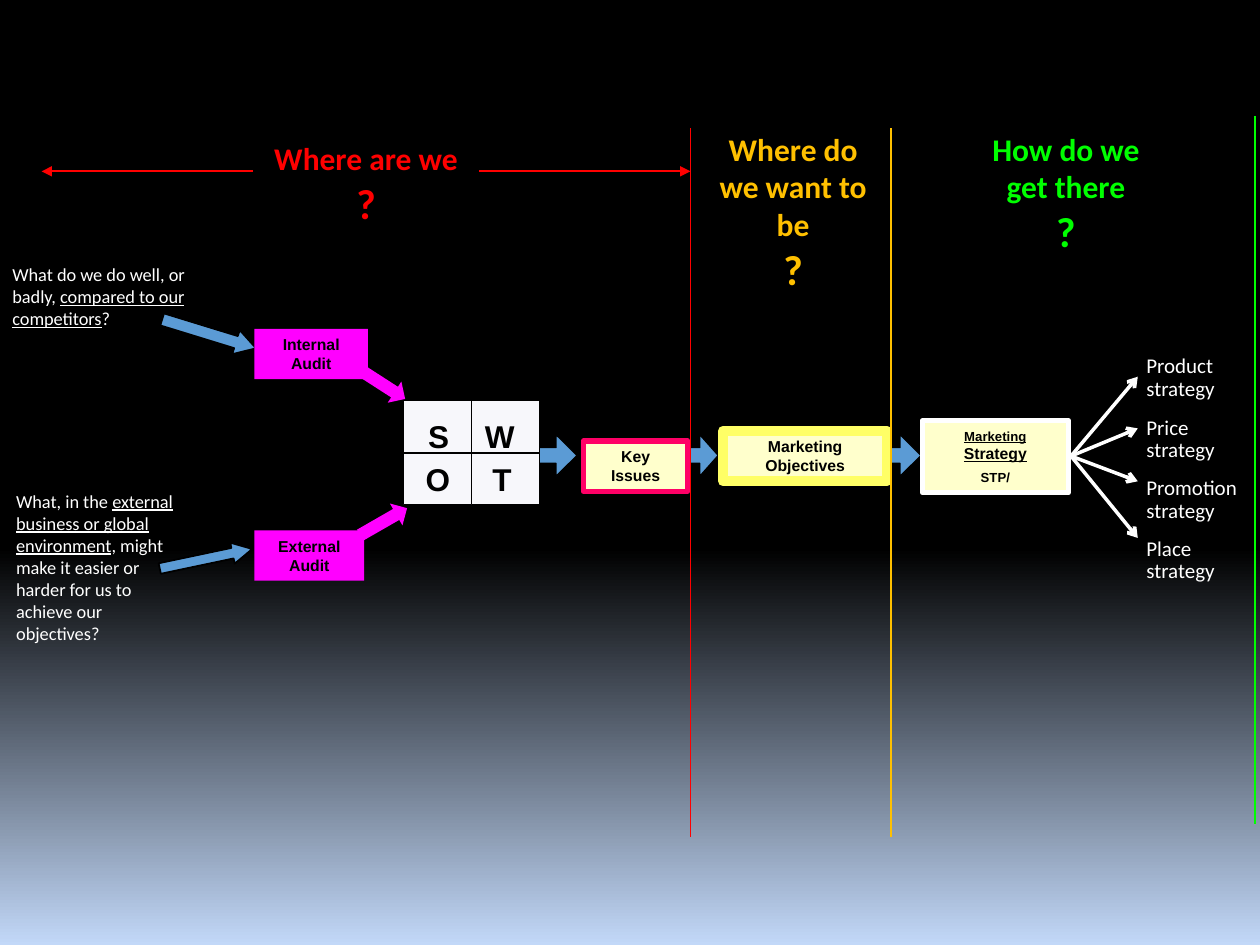
import pptx
import pptx.dml.color
import pptx.enum.shapes
import pptx.enum.text
import pptx.oxml
import pptx.util
from lxml import etree

Inches, Pt = pptx.util.Inches, pptx.util.Pt
RGB = pptx.dml.color.RGBColor.from_string
SHAPE = pptx.enum.shapes.MSO_SHAPE
ALIGN = pptx.enum.text.PP_ALIGN
ANCHOR = pptx.enum.text.MSO_ANCHOR
COLORS = {
    "black": "000000", "white": "FFFFFF", "sky": "C2D8F8", "blue": "5B9BD5",
    "cream": "FFFFCC", "rose": "FF0066", "yellow": "FFFF66", "magenta": "FF00FF",
    "pale": "F7F7FB", "red": "FF0000", "amber": "FFC000", "green": "00FF00",
}

prs = pptx.Presentation()
prs.slide_width, prs.slide_height = Inches(10), Inches(7.5)
slide = prs.slides.add_slide(prs.slide_layouts[6])
shapes = slide.shapes

backdrop = slide.background.fill
backdrop.gradient()
backdrop.gradient_angle = 270
for stop, position, color in zip(backdrop.gradient_stops, (0.58, 1), ("black", "sky")):
    stop.position = position
    stop.color.rgb = RGB(COLORS[color])


def add_box(kind, place, fill=None, line=None, width=0.75, paragraphs=(), font="Arial",
            color="black", bold=True, align=ALIGN.CENTER):
    """Add a shape, or a text box if kind is None; a paragraph is a list of
    (text, size, underline) runs."""
    place = [Inches(v) for v in place]
    if kind is None:
        box = shapes.add_textbox(*place)
    else:
        box = shapes.add_shape(kind, *place)
        box.shadow.inherit = False
        box.fill.solid()
        box.fill.fore_color.rgb = RGB(COLORS[fill])
        if line:
            box.line.color.rgb = RGB(COLORS[line])
            box.line.width = Pt(width)
        else:
            box.line.fill.background()
    frame = box.text_frame
    frame.word_wrap = True
    frame.vertical_anchor = ANCHOR.TOP if kind is None else ANCHOR.MIDDLE
    for i, runs in enumerate(paragraphs):
        paragraph = frame.paragraphs[0] if i == 0 else frame.add_paragraph()
        paragraph.alignment = align
        for text, size, underline in runs:
            run = paragraph.add_run()
            run.text = text
            run.font.name, run.font.size = font, Pt(size)
            run.font.bold, run.font.underline = bold, underline
            run.font.color.rgb = RGB(COLORS[color])
    return box


def add_line(start, end, color, width=1, head=None):
    line = shapes.add_connector(pptx.enum.shapes.MSO_CONNECTOR.STRAIGHT,
                                *[Inches(v) for v in (*start, *end)])
    line.line.color.rgb = RGB(COLORS[color])
    line.line.width = Pt(width)
    if head:
        tail = etree.SubElement(line.line._get_or_add_ln(), pptx.oxml.ns.qn("a:tailEnd"))
        tail.set("type", head)
    etree.SubElement(line._element.spPr, pptx.oxml.ns.qn("a:effectLst"))


# Arrows of the process chain and from the questions to the audits
for place, angle, adjustments, line_width in [
    ((6.99, 3.45, 0.32, 0.33), 0, (0.375, 0.521), 0.75),
    ((5.42, 3.45, 0.28, 0.33), 0, (0.375, 0.521), 0.75),
    ((4.26, 3.45, 0.32, 0.33), 0, (0.375, 0.521), 0.75),
    ((1.26, 4.35, 0.75, 0.17), 348.1, (0.5, 0.94), 1),
    ((1.27, 2.55, 0.78, 0.2), 17.1, (0.5, 0.834), 1),
]:
    arrow = add_box(SHAPE.RIGHT_ARROW, place, "blue", "black", line_width)
    arrow.rotation = angle
    arrow.adjustments[0], arrow.adjustments[1] = adjustments

# Process steps
for place, line, width, paragraphs in [
    ((4.63, 3.5, 0.83, 0.4), "rose", 3, [[("Key Issues", 9, False)]]),
    ((5.74, 3.42, 1.3, 0.4), "yellow", 6, [[("Marketing Objectives", 9, False)]]),
    ((7.32, 3.34, 1.16, 0.57), "white", 3,
     [[("Marketing ", 7.5, True), ("Strategy", 9, True)], [("STP/", 7.5, False)]]),
]:
    step = add_box(SHAPE.RECTANGLE, place, "cream", line, width, paragraphs)
    for paragraph in step.text_frame.paragraphs[1:]:
        paragraph.space_before = Pt(4)

for audit, place in [("External", (2.02, 4.21, 0.87, 0.4)),
                     ("Internal", (2.02, 2.61, 0.9, 0.4))]:
    add_box(SHAPE.RECTANGLE, place, "magenta",
            paragraphs=[[(audit, 9, False)], [("Audit", 9, False)]])

# SWOT grid
for row in range(2):
    for column in range(2):
        add_box(SHAPE.RECTANGLE, (3.2 + 0.54 * column, 3.18 + 0.415 * row, 0.54, 0.41),
                "pale", "black")
for letter, left, top, width in [("S", 3.3, 3.26, 0.46), ("W", 3.75, 3.26, 0.59),
                                 ("O", 3.28, 3.6, 0.51), ("T", 3.81, 3.6, 0.43)]:
    add_box(None, (left, top, width, 0.4), paragraphs=[[(letter, 18, False)]],
            align=ALIGN.LEFT)

# Phase dividers and the span of the first phase
for x, top, color in [(5.48, 1.02, "red"), (7.07, 1.02, "amber"), (9.96, 0.92, "green")]:
    add_line((x, top), (x, top + 5.62), color)
for start, end in [(2.42, 0.33), (3.43, 5.48)]:
    add_line((start, 1.36), (end, 1.36), "red", head="triangle")

# Phase headings
for heading, kind, place, color in [
    ("Where are we", SHAPE.RECTANGLE, (2.01, 1.05, 1.79, 0.81), "red"),
    ("Where do we want to be", None, (5.51, 0.98, 1.57, 1.41), "amber"),
    ("How do we get there", None, (7.74, 0.98, 1.44, 1.11), "green"),
]:
    add_box(kind, place, "black", font="Calibri", color=color,
            paragraphs=[[(heading, 18, False)], [("?", 24, False)]])

# Audit questions
for place, before, stressed, after in [
    ((0, 2.04, 1.68, 0.63), "What do we do well, or badly, ",
     "compared to our competitors", "?"),
    ((0.03, 3.84, 1.51, 1.34), "What, in the ", "external business or global environment",
     ", might make it easier or harder for us to achieve our objectives?"),
]:
    add_box(None, place, font="Calibri", color="white", bold=False, align=ALIGN.LEFT,
            paragraphs=[[(before, 10.5, False), (stressed, 10.5, True), (after, 10.5, False)]])

# Marketing mix strategies
mix = ["Product", "Price", "Promotion", "Place"]
strategies = add_box(None, (9, 2.76, 0.97, 1.96), font="Calibri", color="white", bold=False,
                     align=ALIGN.LEFT,
                     paragraphs=[[(word, 12, False)] for item in mix
                                 for word in (item, "strategy")])
strategies.text_frame.word_wrap = False
for i, paragraph in enumerate(strategies.text_frame.paragraphs):
    paragraph.line_spacing = Pt(13.5 if i < 2 else 12.8)
    if i and i % 2 == 0:
        paragraph.space_before = Pt(9)
for y in (2.99, 3.4, 3.82, 4.27):
    add_line((8.5, 3.62), (9.03, y), "white", 2, "arrow")

# Arrows from the audits to the SWOT grid
for top, left, angle in [(4.04, 2.83, 330.1), (2.95, 2.82, 32.8)]:
    add_box(SHAPE.RIGHT_ARROW, (left, top, 0.43, 0.2), "magenta").rotation = angle

prs.save("out.pptx")
